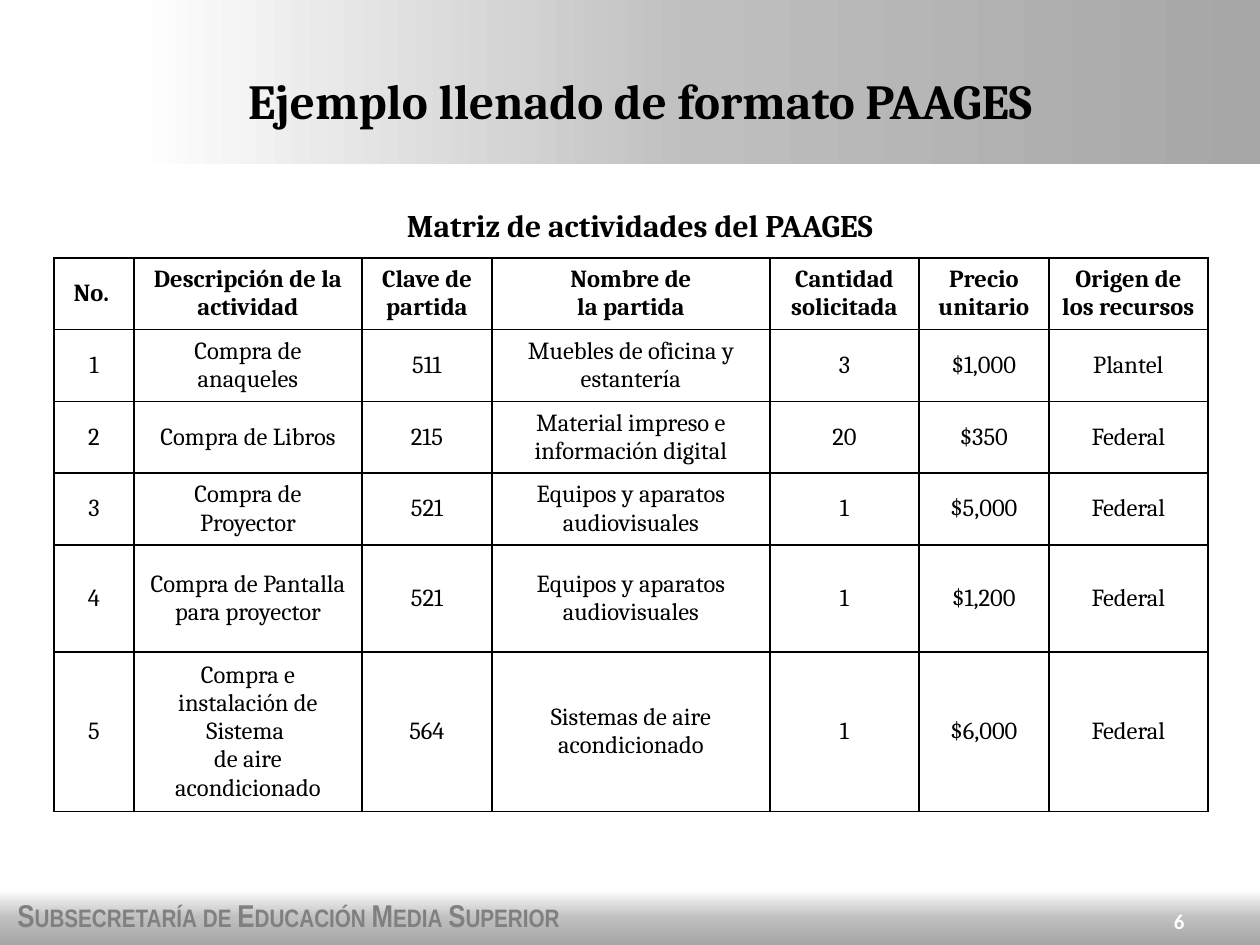
from lxml import etree
from pptx import Presentation
from pptx.dml.color import RGBColor
from pptx.enum.shapes import MSO_SHAPE
from pptx.enum.text import MSO_ANCHOR, MSO_AUTO_SIZE, PP_ALIGN
from pptx.oxml import parse_xml
from pptx.oxml.ns import nsdecls, qn
from pptx.util import Emu, Pt

RECT = MSO_SHAPE.RECTANGLE
TOP, MID = MSO_ANCHOR.TOP, MSO_ANCHOR.MIDDLE
LEFT, MIDST, RIGHT = PP_ALIGN.LEFT, PP_ALIGN.CENTER, PP_ALIGN.RIGHT
FIXED = MSO_AUTO_SIZE.NONE

BLACK, WHITE, GRAY = "000000", "FFFFFF", "808080"
STOPS = [(0, WHITE), (50, "BFBFBF"), (100, "A6A6A6")]
COLS = [80, 228, 130, 278, 149, 130, 159]
ROWS = [71, 72, 71, 72, 107, 159]
HEAD = ["No. ", "Descripción de la actividad", "Clave de partida",
        "Nombre de\nla partida", "Cantidad solicitada", "Precio unitario",
        "Origen de los recursos"]
BODY = [
    ["1", "Compra de anaqueles", "511", "Muebles de oficina y estantería",
     "3", "$1,000", "Plantel"],
    ["2", "Compra de Libros", "215", "Material impreso e información digital",
     "20", "$350", "Federal"],
    ["3", "Compra de Proyector", "521", "Equipos y aparatos audiovisuales",
     "1", "$5,000", "Federal"],
    ["4", "Compra de Pantalla para proyector", "521",
     "Equipos y aparatos audiovisuales", "1", "$1,200", "Federal"],
    ["5", "Compra e instalación de Sistema \vde aire acondicionado", "564",
     "Sistemas de aire acondicionado", "1", "$6,000", "Federal"],
]


def px(num):
    return Emu(round(num * 914400 / 126))


def color(code):
    return RGBColor.from_string(code)


class Deck:
    """Holds the style and the current slide, and draws each kind of element."""

    font = "Cambria"

    def __init__(self):
        self.file = Presentation()
        self.file.slide_width, self.file.slide_height = px(1260), px(945)
        self.slide = self.file.slides.add_slide(self.file.slide_layouts[5])

    def words(self, frame, text, size, bold=True, ink=BLACK, font=None,
              align=MIDST, small=False):
        for i, line in enumerate(text.split("\n")):
            para = frame.add_paragraph() if i else frame.paragraphs[0]
            para.alignment = align
            for j, part in enumerate(line.split("\v")):
                if j:
                    para.add_line_break()
                run = para.add_run()
                run.text = part
                run.font.name = font or self.font
                run.font.size = Pt(size)
                run.font.bold = bold
                run.font.color.rgb = color(ink)
                if small:
                    run._r.get_or_add_rPr().set("cap", "small")

    def band(self, left, top, width, height, angle):
        shape = self.slide.shapes.add_shape(
            RECT, px(left), px(top), px(width), px(height))
        shape.shadow.inherit = False
        shape.line.fill.background()
        shape.fill.gradient()
        grad = shape._element.spPr.find(qn("a:gradFill"))
        for child in list(grad):
            grad.remove(child)
        stops = etree.SubElement(grad, qn("a:gsLst"))
        for place, code in STOPS:
            stop = etree.SubElement(stops, qn("a:gs"), pos=str(place * 1000))
            etree.SubElement(stop, qn("a:srgbClr"), val=code)
        etree.SubElement(grad, qn("a:lin"), ang=str(angle * 60000), scaled="0")

    def text(self, left, top, width, height, text, size, anchor=TOP, **look):
        box = self.slide.shapes.add_textbox(
            px(left), px(top), px(width), px(height))
        box.text_frame.word_wrap = True
        box.text_frame.vertical_anchor = anchor
        self.words(box.text_frame, text, size, **look)

    def title(self, left, top, width, height, text, size):
        shape = self.slide.shapes.title
        shape.left, shape.top = px(left), px(top)
        shape.width, shape.height = px(width), px(height)
        frame = shape.text_frame
        frame.word_wrap = True
        frame.auto_size = FIXED
        frame.vertical_anchor = MID
        self.words(frame, text, size)
        shape._element.getparent().append(shape._element)

    def border(self, cell):
        props = cell._tc.get_or_add_tcPr()
        for i, side in enumerate("LRTB"):
            props.insert(i, parse_xml(
                f'<a:ln{side} {nsdecls("a")} w="12700"><a:solidFill>'
                f'<a:srgbClr val="{BLACK}"/></a:solidFill></a:ln{side}>'))

    def table(self, left, top, cols, rows, data, size):
        table = self.slide.shapes.add_table(
            len(rows), len(cols), px(left), px(top),
            px(sum(cols)), px(sum(rows))).table
        table.first_row = table.horz_banding = False
        for col, width in zip(table.columns, cols):
            col.width = px(width)
        for row, height in zip(table.rows, rows):
            row.height = px(height)
        for i, line in enumerate(data):
            for j, text in enumerate(line):
                cell = table.cell(i, j)
                cell.vertical_anchor = MID
                cell.fill.background()
                self.border(cell)
                self.words(cell.text_frame, text, size, bold=i == 0)


def main():
    deck = Deck()
    deck.band(0, 890, 1260, 55, 90)
    deck.text(5, 890, 814, 50, "Subsecretaría de Educación Media Superior", 18,
              ink=GRAY, font="Arial Narrow", align=LEFT, small=True)
    deck.band(134, 0, 1126, 164, 0)
    deck.text(903, 896, 294, 50, "6", 12, MID, ink=WHITE, font="Calibri",
              align=RIGHT)
    deck.table(54, 258, COLS, ROWS, [HEAD] + BODY, 14)
    deck.title(73, 21, 1134, 158, "Ejemplo llenado de formato PAAGES", 28)
    deck.text(325, 200, 630, 89, "Matriz de actividades del PAAGES", 18)
    deck.file.save("out.pptx")


if __name__ == "__main__":
    main()
